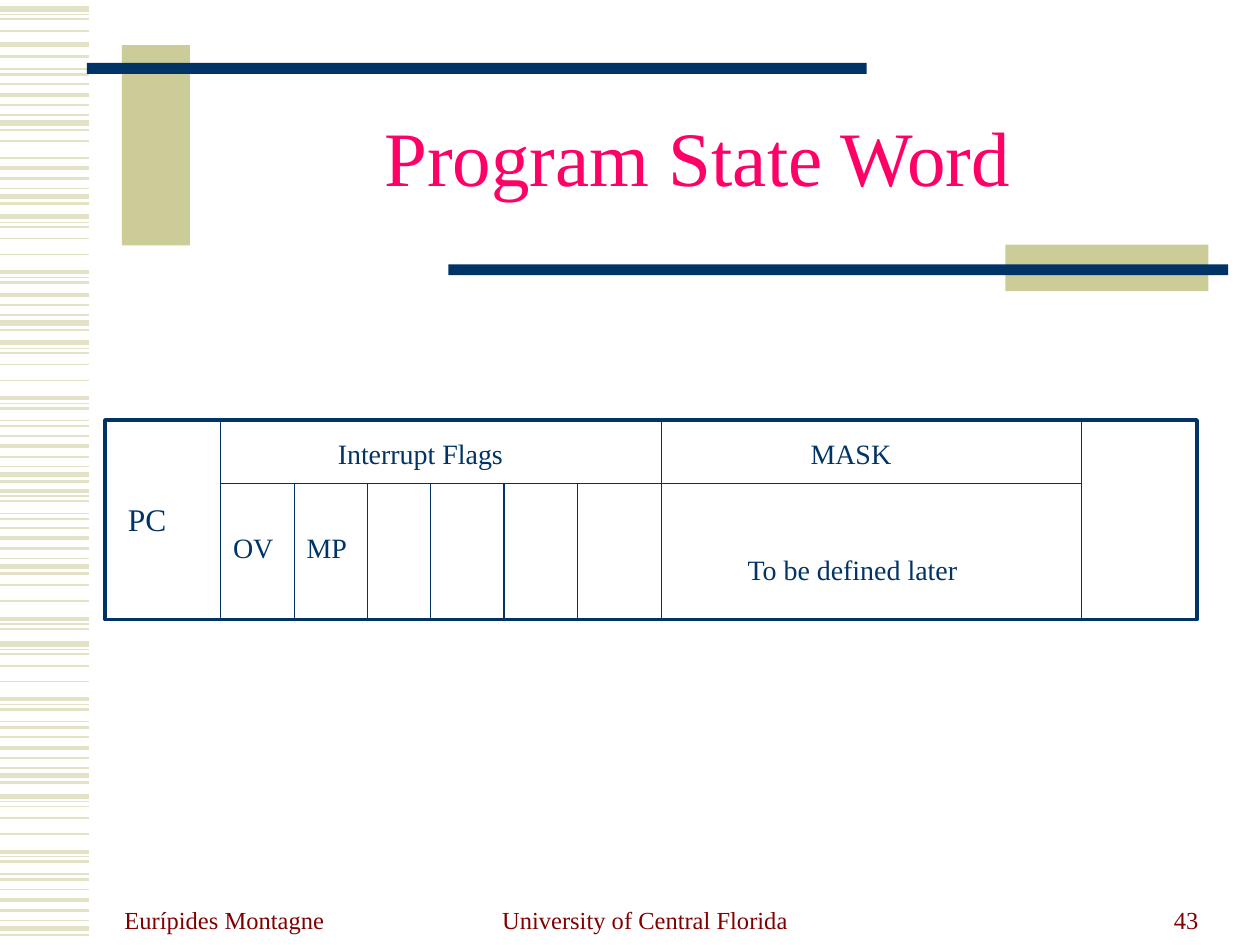
from typing import NamedTuple

from pptx import Presentation
from pptx.dml.color import RGBColor
from pptx.enum.shapes import MSO_CONNECTOR, MSO_SHAPE
from pptx.enum.text import MSO_ANCHOR as ANCHOR, MSO_AUTO_SIZE as AUTO, PP_ALIGN as ALIGN
from pptx.oxml.ns import qn
from pptx.util import Cm, Pt

FONT = "Times New Roman"
NAVY, KHAKI, STRIPE = "003366", "CCCC99", "E3E2C7"
WHITE, PINK, MAROON = "FFFFFF", "FF0066", "800000"


class Box(NamedTuple):
    """Left, top, width and height in centimetres."""
    x: float
    y: float
    w: float
    h: float


class Label(NamedTuple):
    text: str
    box: Box
    size: int = 16


class Footer(NamedTuple):
    text: str
    x: float
    w: float
    align: ALIGN


class Stripe(NamedTuple):
    offset: float
    weight: float


class Run(NamedTuple):
    """Part of a stripe motif, placed from the motif's top."""
    motif: list[Stripe]
    top: float
    first: int = 0
    end: int | None = None


# Sidebar: two motifs of stripes, repeated whole or in part
SHORT = [Stripe(0, 1), Stripe(0.21, 2.25), Stripe(0.42, 1.5),
         Stripe(0.62, 0.75), Stripe(0.78, 3), Stripe(0.92, 1.5)]
LONG = [Stripe(0, 3), Stripe(0.11, 0.75), Stripe(0.21, 1), Stripe(0.44, 1),
        Stripe(0.76, 1), Stripe(1.12, 2.25), Stripe(1.22, 0.75),
        Stripe(1.32, 1.5), Stripe(1.57, 0.75), Stripe(1.68, 1.5)]
SIDEBAR = [
    Run(LONG, 0.18, end=4), Run(LONG, 0.89, end=1), Run(LONG, -0.18, first=7),
    Run(SHORT, 1.7), Run(LONG, 2.08, first=4, end=5), Run(SHORT, 3.18),
    Run(LONG, 4.37, end=8), Run(SHORT, 5.73, first=1), Run(LONG, 6.91),
    Run(SHORT, 8.79), Run(LONG, 8.78, first=5), Run(SHORT, 10.64),
    Run(LONG, 11.36, first=3, end=8), Run(LONG, 12.98), Run(SHORT, 14.86),
    Run(LONG, 16.05), Run(SHORT, 17.93),
]
SIDEBAR_WIDTH = 1.8

DECOR = [
    (Box(2.46, 0.91, 1.37, 4.04), KHAKI),
    (Box(1.75, 1.27, 15.72, 0.22), NAVY),
    (Box(20.27, 4.93, 4.09, 0.94), KHAKI),
    (Box(9.04, 5.33, 15.72, 0.22), NAVY),
]

FOOTERS = [
    Footer("Eurípides Montagne", 2.26, 5.28, ALIGN.LEFT),
    Footer("University of Central Florida", 8.71, 8.59, ALIGN.CENTER),
    Footer("43", 18.31, 6.1, ALIGN.RIGHT),
]

# State word: full-height field borders and flag borders below the header
WORD = Box(2.12, 8.47, 22.01, 4.02)
HEADER_BOTTOM = 9.74
FIELD_EDGES = [4.45, 13.34, 21.8]
FLAG_EDGES = [5.93, 7.41, 8.68, 10.16, 11.64]
LABELS = [
    Label("PC", Box(2.33, 9.95, 1.69, 1.02), 18),
    Label("Interrupt Flags", Box(6.56, 8.68, 4.87, 0.94)),
    Label("MASK", Box(16.09, 8.68, 2.75, 0.94)),
    Label("OV", Box(4.45, 10.58, 1.9, 0.94)),
    Label("MP", Box(5.93, 10.58, 1.9, 0.94)),
    Label("To be defined later", Box(14.82, 11.01, 5.93, 0.94)),
]


def rgb(color: str) -> RGBColor:
    return RGBColor.from_string(color)


def cm(box: Box) -> list[Cm]:
    return [Cm(v) for v in box]


def add_line(s, x1: float, y1: float, x2: float, y2: float,
             color: str = NAVY, weight: float = 0.75) -> None:
    line = s.shapes.add_connector(MSO_CONNECTOR.STRAIGHT, Cm(x1), Cm(y1), Cm(x2), Cm(y2))
    line.line.color.rgb = rgb(color)
    line.line.width = Pt(weight)
    sp_pr = line._element.spPr
    sp_pr.append(sp_pr.makeelement(qn("a:effectLst"), {}))


def add_rect(s, box: Box, fill: str, line: str | None = None, weight: float = 0) -> None:
    sp = s.shapes.add_shape(MSO_SHAPE.RECTANGLE, *cm(box))
    sp.shadow.inherit = False
    sp.fill.solid()
    sp.fill.fore_color.rgb = rgb(fill)
    if line:
        sp.line.color.rgb = rgb(line)
        sp.line.width = Pt(weight)
    else:
        sp.line.fill.background()


def write(sp, text: str, *, size: int, color: str, align: ALIGN = ALIGN.LEFT,
          anchor: ANCHOR = ANCHOR.TOP, fit: AUTO = AUTO.NONE,
          spacing: float = 1.0) -> None:
    tf = sp.text_frame
    tf.word_wrap = True
    tf.auto_size = fit
    tf.vertical_anchor = anchor
    p = tf.paragraphs[0]
    p.alignment = align
    p.line_spacing = spacing
    r = p.add_run()
    r.text = text
    r.font.name = FONT
    r.font.size = Pt(size)
    r.font.color.rgb = rgb(color)


def add_text(s, box: Box, text: str, **fmt) -> None:
    write(s.shapes.add_textbox(*cm(box)), text, **fmt)


def main() -> None:
    prs = Presentation()
    prs.slide_width, prs.slide_height = Cm(25.4), Cm(19.05)
    s = prs.slides.add_slide(prs.slide_layouts[5])

    # Background decoration
    for run in SIDEBAR:
        for stripe in run.motif[run.first:run.end]:
            y = run.top + stripe.offset
            add_line(s, 0, y, SIDEBAR_WIDTH, y, STRIPE, stripe.weight)
    for box, color in DECOR:
        add_rect(s, box, color)

    # Title
    title = s.shapes.title
    title.left, title.top, title.width, title.height = cm(Box(3.81, 1.7, 20.5, 3.18))
    write(title, "Program State Word", size=44, color=PINK, align=ALIGN.CENTER,
          anchor=ANCHOR.MIDDLE, spacing=0.85)

    # Program state word
    add_rect(s, WORD, WHITE, NAVY, 2.25)
    bottom = WORD.y + WORD.h
    for x in FIELD_EDGES:
        add_line(s, x, WORD.y, x, bottom)
    add_line(s, FIELD_EDGES[0], HEADER_BOTTOM, FIELD_EDGES[-1], HEADER_BOTTOM)
    for x in FLAG_EDGES:
        add_line(s, x, HEADER_BOTTOM, x, bottom)
    for label in LABELS:
        add_text(s, label.box, label.text, size=label.size, color=NAVY,
                 fit=AUTO.SHAPE_TO_FIT_TEXT)

    # Footer
    for footer in FOOTERS:
        add_text(s, Box(footer.x, 17.7, footer.w, 1.27), footer.text, size=14,
                 color=MAROON, align=footer.align, anchor=ANCHOR.BOTTOM)

    prs.save("out.pptx")


if __name__ == "__main__":
    main()
